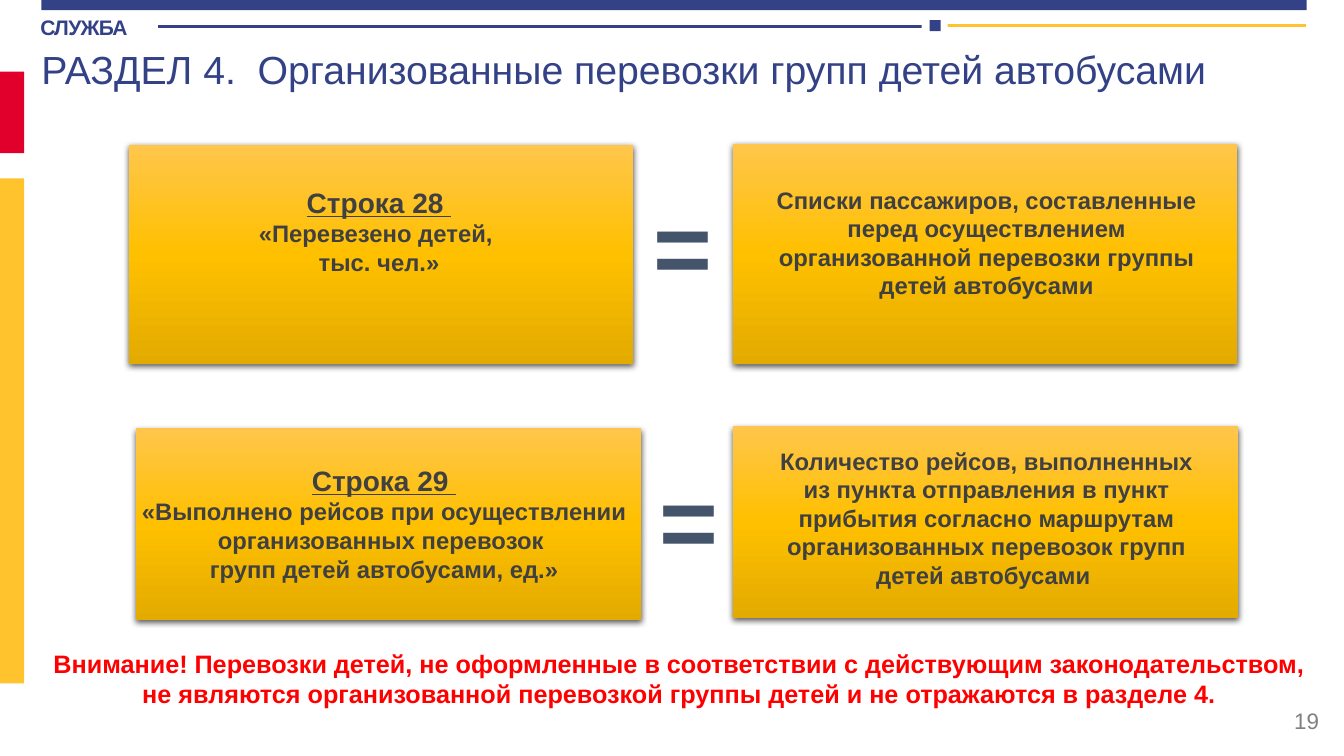
from pptx import Presentation
from pptx.dml.color import RGBColor
from pptx.enum.shapes import MSO_CONNECTOR, MSO_SHAPE
from pptx.enum.text import MSO_ANCHOR, PP_ALIGN
from pptx.oxml import parse_xml
from pptx.oxml.ns import nsdecls
from pptx.util import Pt

RECTANGLE = MSO_SHAPE.RECTANGLE
STRAIGHT = MSO_CONNECTOR.STRAIGHT
TOP, MIDDLE = MSO_ANCHOR.TOP, MSO_ANCHOR.MIDDLE
LEFT, CENTER, RIGHT = PP_ALIGN.LEFT, PP_ALIGN.CENTER, PP_ALIGN.RIGHT

PX = 9144  # EMU in one px, 100 px to the inch
COLORS = {
    "navy": "334286", "red": "E1002B", "yellow": "FFC32E", "white": "FFFFFF",
    "text": "404040", "number": "808080", "warning": "FF0000", "equals": "44546A",
}
GRADIENT = f"""<a:gradFill {nsdecls("a")} rotWithShape="1"><a:gsLst>
<a:gs pos="0"><a:srgbClr val="FFC64B"/></a:gs>
<a:gs pos="50000"><a:srgbClr val="FFC000"/></a:gs>
<a:gs pos="100000"><a:srgbClr val="E3AB00"/></a:gs>
</a:gsLst><a:lin ang="5400000" scaled="0"/></a:gradFill>"""
SHADOW = f"""<a:effectLst {nsdecls("a")}>
<a:outerShdw blurRad="57150" dist="19050" dir="5400000" algn="ctr" rotWithShape="0">
<a:srgbClr val="000000"><a:alpha val="63000"/></a:srgbClr></a:outerShdw></a:effectLst>"""

presentation = Presentation()
presentation.slide_width = 1333 * PX
presentation.slide_height = 750 * PX
slide = presentation.slides.add_slide(presentation.slide_layouts[5])
shapes = slide.shapes


def add_bar(box, color):
    shape = shapes.add_shape(RECTANGLE, *[length * PX for length in box])
    shape.shadow.inherit = False
    shape.fill.solid()
    shape.fill.fore_color.rgb = RGBColor.from_string(COLORS[color])
    shape.line.fill.background()


def write(shape, box, lines, color, bold=True, align=CENTER, anchor=TOP):
    """Place a text shape and fill it with (text, size) lines."""
    shape.left, shape.top, shape.width, shape.height = [length * PX for length in box]
    text_frame = shape.text_frame
    text_frame.word_wrap = True
    text_frame.vertical_anchor = anchor
    text_frame.text = "\n".join(text for text, size in lines)
    for paragraph, (text, size) in zip(text_frame.paragraphs, lines):
        paragraph.alignment = align
        font = paragraph.runs[0].font
        font.name, font.size, font.bold = "Arial", Pt(size), bold
        font.color.rgb = RGBColor.from_string(COLORS[color])
    return text_frame


# Frame: top bar and side bars
add_bar((41, 0, 1255, 10), "navy")
add_bar((0, 71, 24, 81), "red")
add_bar((0, 177, 24, 501), "yellow")

# Header rule with a square marker
for start, end, y, color in [(157, 933, 26, "navy"), (919, 1295, 25, "yellow")]:
    rule = shapes.add_connector(STRAIGHT, start * PX, y * PX, end * PX, y * PX)
    rule.line.color.rgb = RGBColor.from_string(COLORS[color])
    rule.line.width = Pt(2)
    rule._element.spPr.append(parse_xml(f"<a:effectLst {nsdecls('a')}/>"))
add_bar((914, 20, 26, 11), "white")
add_bar((922, 20, 11, 11), "navy")

# Header label
label = write(shapes.add_textbox(0, 0, 0, 0), (39, 13, 115, 32),
              [("СЛУЖБА", 15)], "navy", align=LEFT)
label.margin_right = label.margin_bottom = 0
label.margin_left = label.margin_top = PX
label.paragraphs[0].space_before = Pt(1)
label.paragraphs[0].runs[0].font._element.set("spc", "-50")

# Title
title = write(shapes.title, (31, 53, 1286, 67),
              [("РАЗДЕЛ 4.  Организованные перевозки групп детей автобусами", 28)],
              "navy", bold=False, align=LEFT)
title.paragraphs[0].line_spacing = 0.7
title.paragraphs[0].space_before = Pt(10)

# Gold cards
for box in [(128, 144, 500, 217), (727, 143, 500, 218),
            (135, 425, 501, 190), (727, 423, 501, 190)]:
    card = shapes.add_shape(RECTANGLE, *[length * PX for length in box])
    card.line.fill.background()
    properties = card._element.spPr
    properties.find("{*}ln").addprevious(parse_xml(GRADIENT))
    properties.append(parse_xml(SHADOW))

# Each row: form line = source of its value
rows = [
    ((124, 179, 504, 101),
     [("Строка 28 ", 20), ("«Перевезено детей, ", 17), ("тыс. чел.»", 17)],
     (638, 177, 72, 131),
     (750, 179, 457, 125),
     "Списки пассажиров, составленные перед осуществлением "
     "организованной перевозки группы детей автобусами"),
    ((124, 455, 514, 130),
     [("Строка 29 ", 20),
      ("«Выполнено рейсов при осуществлении организованных перевозок ", 17),
      ("групп детей автобусами, ед.»", 17)],
     (644, 449, 72, 131),
     (750, 438, 457, 153),
     "Количество рейсов, выполненных из пункта отправления в пункт прибытия "
     "согласно маршрутам организованных перевозок групп детей автобусами "),
]
for line_box, line_text, equals_box, source_box, source_text in rows:
    form_line = write(shapes.add_textbox(0, 0, 0, 0), line_box, line_text, "text")
    form_line.paragraphs[0].runs[0].font.underline = True
    write(shapes.add_textbox(0, 0, 0, 0), equals_box, [("=", 72)], "equals", align=LEFT)
    write(shapes.add_textbox(0, 0, 0, 0), source_box, [(source_text, 17)], "text")

# Warning and slide number
write(shapes.add_textbox(0, 0, 0, 0), (42, 638, 1263, 71),
      [("Внимание! Перевозки детей, не оформленные в соответствии с действующим "
        "законодательством, не являются организованной перевозкой группы детей "
        "и не отражаются в разделе 4.", 18)], "warning")
write(shapes.add_textbox(0, 0, 0, 0), (1018, 695, 300, 40), [("19", 16)], "number",
      bold=False, align=RIGHT, anchor=MIDDLE)

presentation.save("out.pptx")
